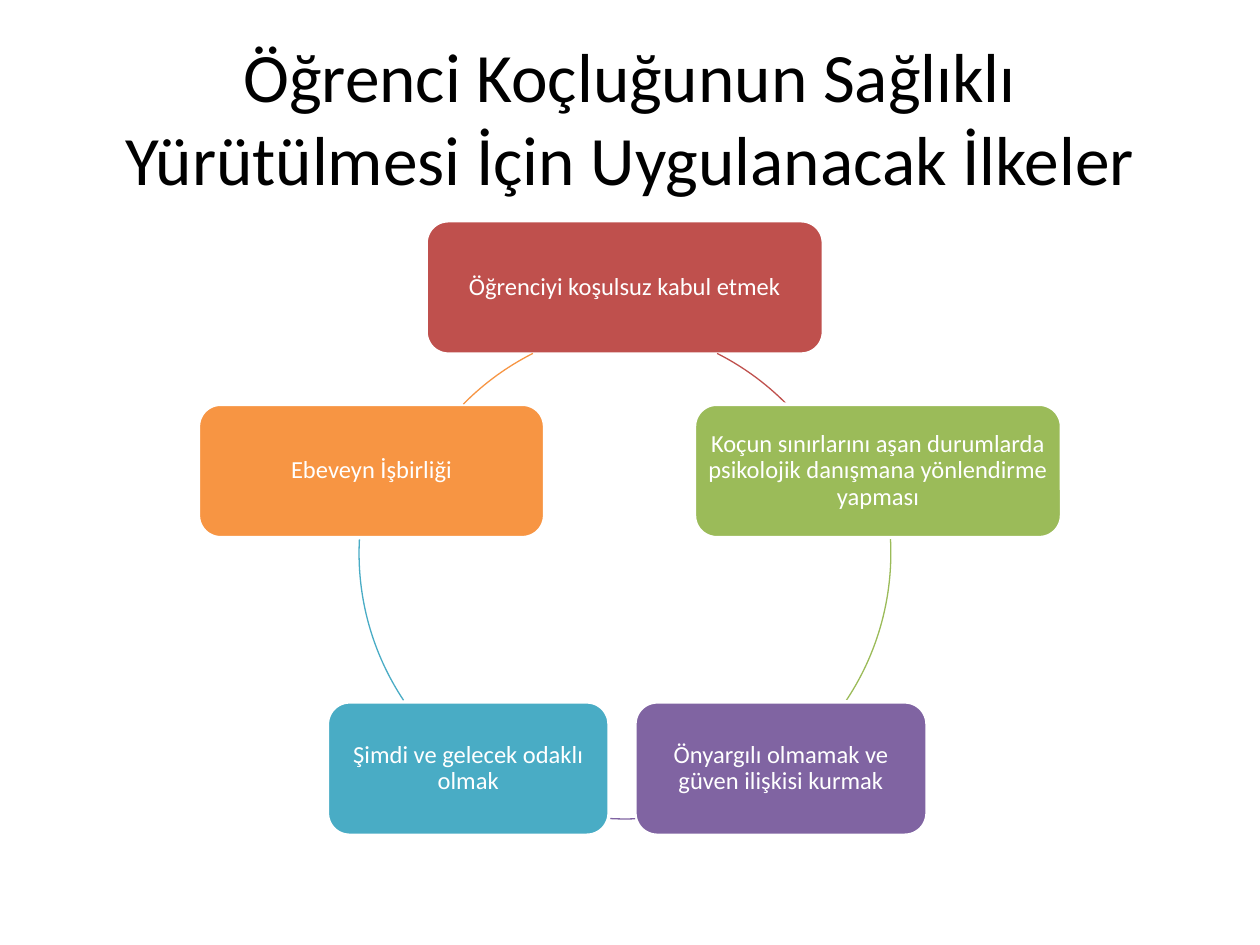
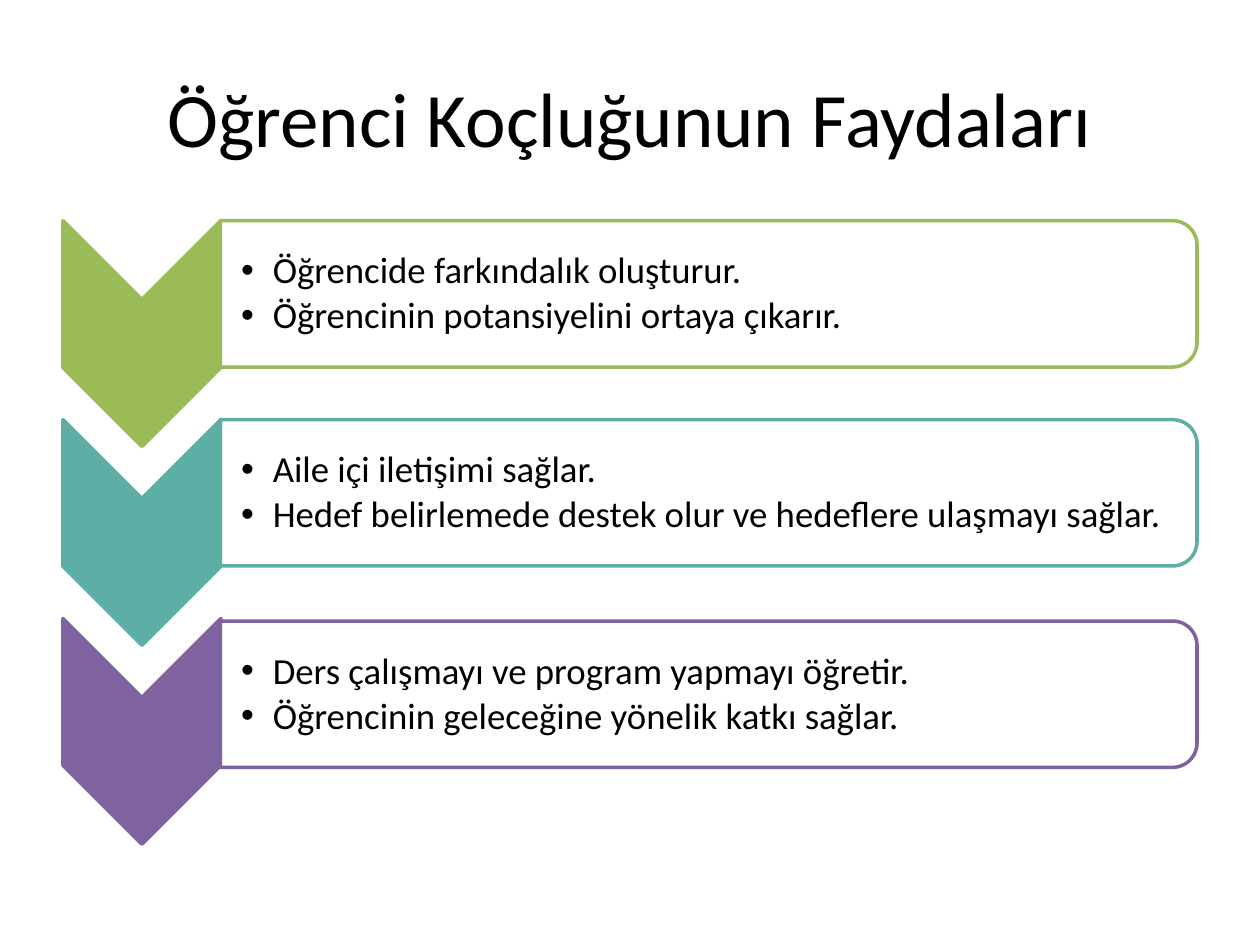
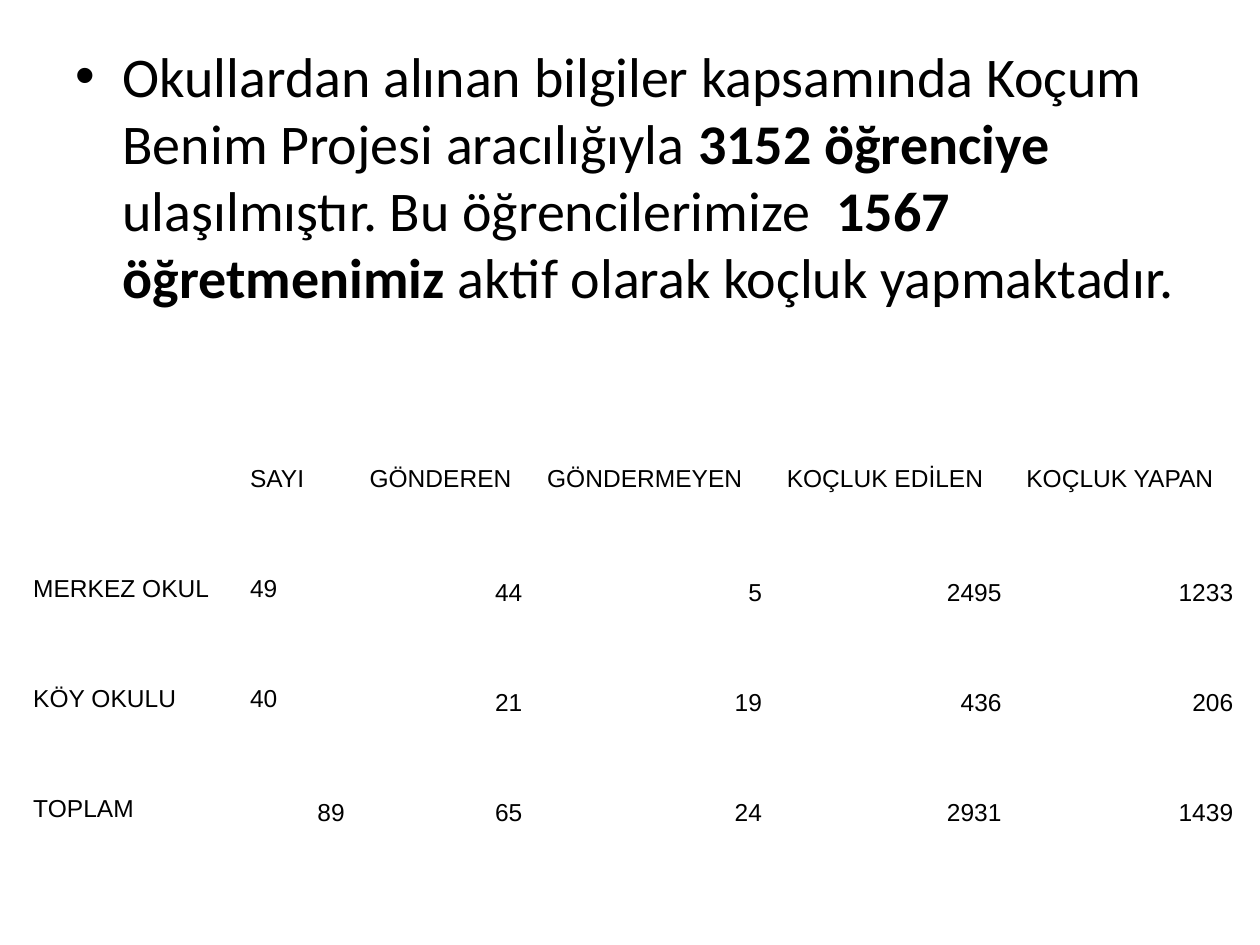
from lxml import etree
from pptx import Presentation
from pptx.dml.color import RGBColor
from pptx.enum import shapes, text
from pptx.oxml.ns import qn
from pptx.util import Cm, Pt

INK = {
    "black": "000000", "white": "FFFFFF", "red": "BF504D", "green": "9BBB59",
    "violet": "8064A2", "blue": "49ACC5", "orange": "F79543",
    "teal": "5DAEA5", "plum": "7F63A1",
}
KIND = shapes.MSO_SHAPE
ALIGN = text.PP_ALIGN
MID = text.MSO_ANCHOR.MIDDLE
PLAIN = "{2D5ABB26-0587-4C30-8999-92F81FD0307C}"  # table style without grid

# Ring of principles: text, colour, left, top, width
NODES = [
    ("Öğrenciyi koşulsuz kabul etmek", "red", 8.59, 4.45, 8.01),
    ("Koçun sınırlarını aşan durumlarda psikolojik danışmana yönlendirme yapması",
     "green", 14, 8.15, 7.4),
    ("Önyargılı olmamak ve güven ilişkisi kurmak", "violet", 12.8, 14.15, 5.89),
    ("Şimdi ve gelecek odaklı olmak", "blue", 6.6, 14.15, 5.68),
    ("Ebeveyn İşbirliği", "orange", 4, 8.15, 6.98),
]
# Links of the ring: colour, centre x, centre y, first and last degree from the top
ARCS = [
    ("red", 12.04, 11.91, 26.8, 45.4),
    ("green", 12.6, 11.15, 87, 123.6),
    ("violet", 12.6, 11.15, 177.8, 183.3),
    ("blue", 12.6, 11.15, 236.4, 273),
    ("orange", 13.16, 11.91, 314.6, 333.2),
]
# Benefits: colour, top of the panel, lines
GAINS = [
    ("green", 4.45, ["Öğrencide farkındalık oluşturur.",
                     "Öğrencinin potansiyelini ortaya çıkarır."]),
    ("teal", 8.46, ["Aile içi iletişimi sağlar.",
                    "Hedef belirlemede destek olur ve hedeflere ulaşmayı sağlar."]),
    ("plum", 12.52, ["Ders çalışmayı ve program yapmayı öğretir.",
                     "Öğrencinin geleceğine yönelik katkı sağlar."]),
]
REACH = [
    ("Okullardan alınan bilgiler kapsamında Koçum Benim Projesi aracılığıyla ", False),
    ("3152 öğrenciye ", True),
    ("ulaşılmıştır. Bu öğrencilerimize  ", False),
    ("1567 öğretmenimiz ", True),
    ("aktif olarak koçluk yapmaktadır.", False),
]
COLS = [4.37, 2.41, 3.58, 4.83, 4.83, 4.67]
ROWS = [2.22, 2.22, 2.22, 1.57]
COUNTS = [
    ["", "SAYI", "GÖNDEREN", "GÖNDERMEYEN", "KOÇLUK EDİLEN", "KOÇLUK YAPAN"],
    ["MERKEZ OKUL", "49", "44", "5", "2495", "1233"],
    ["KÖY OKULU", "40", "21", "19", "436", "206"],
    ["TOPLAM", "89", "65", "24", "2931", "1439"],
]


def tint(name):
    return RGBColor.from_string(INK[name])


def style(para, size, ink="black", face="Calibri", align=ALIGN.LEFT, gap=None):
    para.alignment = align
    if gap:
        para.line_spacing = gap
    for run in para.runs:
        run.font.size = Pt(size)
        run.font.name = face
        run.font.color.rgb = tint(ink)


def inset(item, left, top, right, bottom):
    item.margin_left, item.margin_top = Cm(left), Cm(top)
    item.margin_right, item.margin_bottom = Cm(right), Cm(bottom)


def bullet(para, dent):
    props = para._p.get_or_add_pPr()
    props.set("marL", str(Cm(dent)))
    props.set("indent", str(-Cm(dent)))
    etree.SubElement(props, qn("a:buFont")).set("typeface", "Arial")
    etree.SubElement(props, qn("a:buChar")).set("char", "•")


def add_text(slide, x, y, w, h, pad):
    frame = slide.shapes.add_textbox(Cm(x), Cm(y), Cm(w), Cm(h)).text_frame
    frame.word_wrap = True
    inset(frame, *pad)
    return frame


def add_title(slide, words, size):
    frame = add_text(slide, 1.27, 0.76, 22.86, 3.18, (0.25, 0.13, 0.25, 0.13))
    frame.vertical_anchor = MID
    frame.text = words
    style(frame.paragraphs[0], size, align=ALIGN.CENTER)


def add_form(slide, kind, x, y, w, h, fill, line, width=2):
    form = slide.shapes.add_shape(kind, Cm(x), Cm(y), Cm(w), Cm(h))
    form.shadow.inherit = False
    if fill:
        form.fill.solid()
        form.fill.fore_color.rgb = tint(fill)
    else:
        form.fill.background()
    form.line.color.rgb = tint(line)
    form.line.width = Pt(width)
    etree.SubElement(form.element.spPr.find(qn("a:ln")), qn("a:round"))
    return form


def add_turned(slide, kind, x, y, w, h, fill, line):
    """Fill the box x, y, w, h with a shape turned a quarter clockwise."""
    shift = (w - h) / 2
    add_form(slide, kind, x + shift, y - shift, h, w, fill, line).rotation = 90


def add_node(slide, words, ink, x, y, w):
    frame = add_form(slide, KIND.ROUNDED_RECTANGLE, x, y, w, 2.69, ink, "white").text_frame
    frame.word_wrap = True
    frame.vertical_anchor = MID
    inset(frame, 0.12, 0.15, 0.12, 0.15)
    frame.text = words
    style(frame.paragraphs[0], 14, "white", align=ALIGN.CENTER, gap=0.9)


def add_arc(slide, ink, x, y, first, last, radius=5.36):
    arc = add_form(slide, KIND.ARC, x - radius, y - radius, 2 * radius, 2 * radius,
                   None, ink, 0.75)
    # Angles count from the right, in 60000ths of a degree against a base of 100000
    for i, turn in enumerate((first, last)):
        arc.adjustments[i] = (turn - 90) % 360 * 0.6


def add_gain(slide, row, ink, top, lines):
    add_turned(slide, KIND.CHEVRON, 1.27, 4.45 + row * 4.01, 3.18, 4.55, ink, ink)
    add_turned(slide, KIND.ROUND_2_SAME_RECTANGLE, 4.44, top, 19.69, 2.95, "white", ink)
    frame = add_text(slide, 4.45, top + 0.15, 19.53, 2.67, (0.41, 0.03, 0.03, 0.03))
    frame.vertical_anchor = MID
    frame.text = "\n".join(lines)
    for i, para in enumerate(frame.paragraphs):
        style(para, 21, gap=0.9)
        para.space_before = Pt(3.1 if i else 0)
        bullet(para, 0.64)


def add_reach(slide):
    frame = add_text(slide, 1.27, 0.7, 22.86, 18.06, (0.25, 0.13, 0.25, 0.13))
    para = frame.paragraphs[0]
    for words, bold in REACH:
        run = para.add_run()
        run.text = words
        run.font.bold = bold
    style(para, 32)
    bullet(para, 0.95)


def add_counts(slide):
    grid = slide.shapes.add_table(len(ROWS), len(COLS), Cm(0.42), Cm(9.12),
                                  Cm(sum(COLS)), Cm(sum(ROWS))).table
    grid.first_row = grid.horz_banding = False
    grid._tbl.tblPr.find(qn("a:tableStyleId")).text = PLAIN
    for col, width in zip(grid.columns, COLS):
        col.width = Cm(width)
    for r, height in enumerate(ROWS):
        grid.rows[r].height = Cm(height)
        for c, words in enumerate(COUNTS[r]):
            cell = grid.cell(r, c)
            cell.fill.background()
            inset(cell, 0.25, 0.25, 0.25, 0.25)
            cell.text = words
            # Counts sit right, except the school numbers above the total
            right = words.isdigit() and (c > 1 or r == len(ROWS) - 1)
            style(cell.text_frame.paragraphs[0], 14, face="Arial",
                  align=ALIGN.RIGHT if right else ALIGN.LEFT,
                  gap=1.15 if right else None)


def main():
    deck = Presentation()
    deck.slide_width, deck.slide_height = Cm(25.4), Cm(19.05)
    rules, gains, reach = [deck.slides.add_slide(deck.slide_layouts[6]) for _ in range(3)]

    # Principles
    add_title(rules, "Öğrenci Koçluğunun Sağlıklı Yürütülmesi İçin Uygulanacak İlkeler", 39.6)
    for node, arc in zip(NODES, ARCS):
        add_node(rules, *node)
        add_arc(rules, *arc)

    # Benefits
    add_title(gains, "Öğrenci Koçluğunun Faydaları", 44)
    for row, gain in enumerate(GAINS):
        add_gain(gains, row, *gain)

    # Reach of the project
    add_reach(reach)
    add_counts(reach)

    deck.save("out.pptx")


if __name__ == "__main__":
    main()
